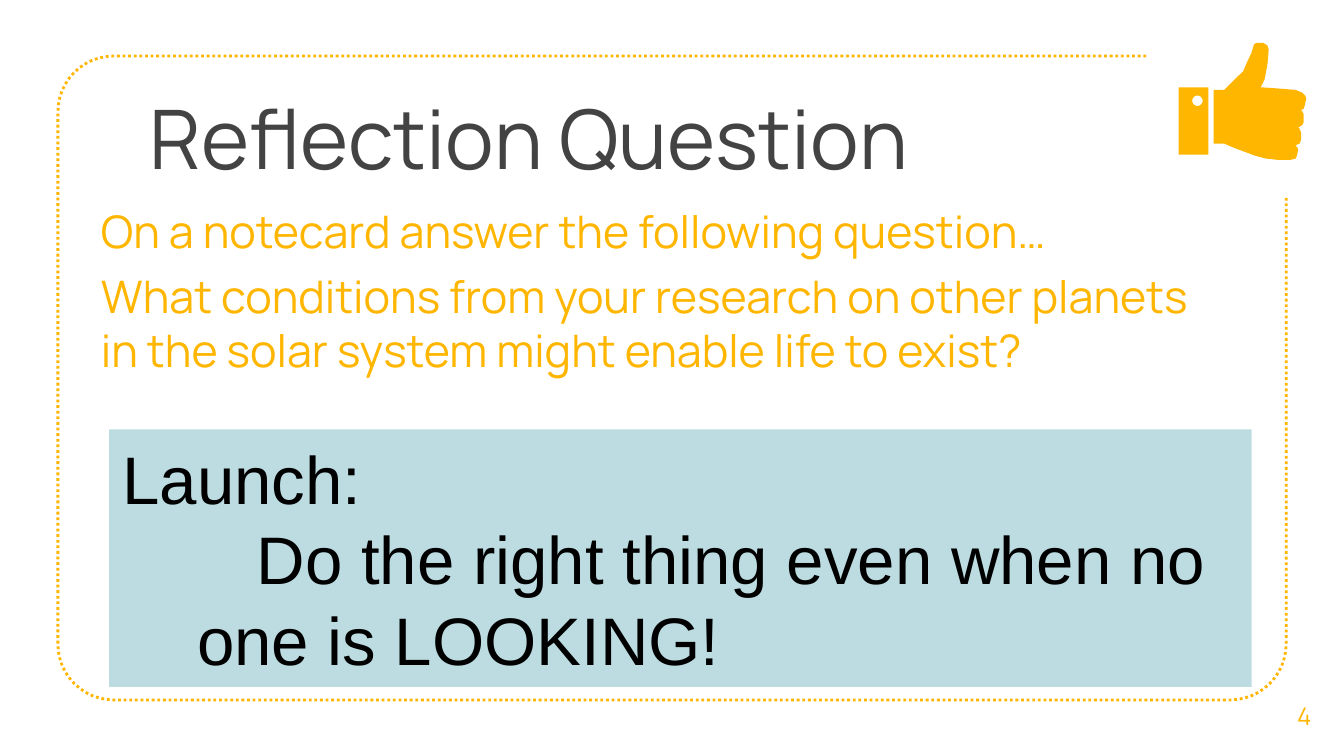
import math
from dataclasses import dataclass

from pptx import Presentation
from pptx.dml.color import RGBColor
from pptx.enum.dml import MSO_LINE
from pptx.enum.shapes import MSO_SHAPE
from pptx.enum.text import MSO_ANCHOR, PP_ALIGN
from pptx.util import Pt

RECTANGLE = MSO_SHAPE.RECTANGLE
DOTTED = MSO_LINE.ROUND_DOT
TOP, MIDDLE = MSO_ANCHOR.TOP, MSO_ANCHOR.MIDDLE
LEFT, CENTER = PP_ALIGN.LEFT, PP_ALIGN.CENTER


@dataclass(frozen=True)
class Theme:
    accent: RGBColor = RGBColor(0xFF, 0xB6, 0x00)
    heading: RGBColor = RGBColor(0x43, 0x43, 0x43)
    banner: RGBColor = RGBColor(0xBC, 0xDC, 0xE1)
    ink: RGBColor = RGBColor(0, 0, 0)
    main_font: str = "Manrope"
    banner_font: str = "Arial"
    title_size: float = 44
    body_size: float = 24
    banner_size: float = 36
    number_size: float = 13


THEME = Theme()

THUMB = [
    (675.4, 23), (673, 23), (671.8, 23.8), (670.3, 28.8), (668.2, 33.1),
    (666, 38.2), (663.1, 41), (655.9, 48.2), (650.2, 48.2), (650.2, 77),
    (655.9, 77), (661, 79.2), (672.5, 83.5), (678.2, 85), (684.7, 85.7),
    (691.2, 85.7), (694.1, 85), (694.8, 83.5), (695.5, 80), (694.1, 77.8),
    (696.2, 77), (697, 75), (697, 71), (696.2, 69), (695.5, 68.4),
    (697.7, 67), (698.4, 65.5), (698.4, 61.2), (697.7, 59.8), (697, 59),
    (698.4, 58.3), (699.1, 56.2), (699.8, 52.6), (699.1, 51.1),
    (697.7, 49.7), (694.1, 48.2), (685.4, 47.5), (675.4, 46.8),
    (677.5, 42.5), (679, 34.6), (679.7, 26.6), (679, 24.5), (676.8, 23),
]


def arc(center_x, center_y, radius, start, sweep, steps):
    angles = [math.radians(start + sweep * step / steps) for step in range(steps + 1)]
    return [(center_x + radius * math.cos(angle), center_y + radius * math.sin(angle))
            for angle in angles]


def add_outline(page, contours, closed=True):
    contours = [[(Pt(x), Pt(y)) for x, y in contour] for contour in contours]
    builder = page.shapes.build_freeform(*contours[0][0], scale=1.0)
    for index, contour in enumerate(contours):
        if index:
            builder.move_to(*contour[0])
        builder.add_line_segments(contour[1:], close=closed)
    shape = builder.convert_to_shape()
    shape.shadow.inherit = False
    return shape


def add_frame(page):
    left, top, right, bottom, radius = 31, 30, 689, 375, 30
    points = [(614, top)]
    points += arc(left + radius, top + radius, radius, 270, -90, 12)
    points += arc(left + radius, bottom - radius, radius, 180, -90, 12)
    points += arc(right - radius, bottom - radius, radius, 90, -90, 12)
    points.append((right, 105))
    frame = add_outline(page, [points], closed=False)
    frame.fill.background()
    frame.line.color.rgb = THEME.accent
    frame.line.width = Pt(1.5)
    frame.line.dash_style = DOTTED


def add_thumbs_up(page):
    cuff = [(631.4, 46.8), (631.4, 82.8), (647.3, 82.8), (647.3, 46.8)]
    button = arc(641.5, 54, 2.8, 0, 360, 24)
    for contours in ([cuff, button], [THUMB]):
        part = add_outline(page, contours)
        part.fill.solid()
        part.fill.fore_color.rgb = THEME.accent
        part.line.fill.background()


def write(box, texts, size, color, font=THEME.main_font, align=LEFT, anchor=TOP,
          inset=7.2, space_before=0, line_spacing=None):
    frame = box.text_frame
    frame.word_wrap = True
    frame.vertical_anchor = anchor
    frame.margin_left = frame.margin_right = Pt(7.2)
    frame.margin_top = frame.margin_bottom = Pt(inset)
    for index, text in enumerate(texts):
        para = frame.add_paragraph() if index else frame.paragraphs[0]
        para.alignment = align
        para.space_before = Pt(space_before)
        if line_spacing:
            para.line_spacing = Pt(line_spacing)
        span = para.add_run()
        span.text = text
        span.font.name = font
        span.font.size = Pt(size)
        span.font.color.rgb = color
    return frame


def add_text(page, left, top, width, height, texts, size, color, **layout):
    box = page.shapes.add_textbox(Pt(left), Pt(top), Pt(width), Pt(height))
    write(box, texts, size, color, **layout)


def add_banner(page):
    box = page.shapes.add_shape(RECTANGLE, Pt(58.5), Pt(230), Pt(612), Pt(138))
    box.shadow.inherit = False
    box.fill.solid()
    box.fill.fore_color.rgb = THEME.banner
    box.line.fill.background()
    frame = write(box, ["Launch:", "Do the right thing even when no one is LOOKING!"],
                  THEME.banner_size, THEME.ink, font=THEME.banner_font,
                  anchor=MIDDLE, inset=3.6, line_spacing=43.2)
    properties = frame.paragraphs[1]._p.get_or_add_pPr()
    properties.set("marL", str(Pt(40)))
    properties.set("indent", str(Pt(32)))


def main():
    deck = Presentation()
    deck.slide_width, deck.slide_height = Pt(720), Pt(405)
    page = deck.slides.add_slide(deck.slide_layouts[6])
    add_frame(page)
    add_text(page, 73, 39.5, 438, 68, ["Reflection Question"],
             THEME.title_size, THEME.heading)
    add_text(page, 47, 102, 603, 115,
             ["On a notecard answer the following question…",
              "What conditions from your research on other planets "
              "in the solar system might enable life to exist?"],
             THEME.body_size, THEME.accent, space_before=6)
    add_text(page, 677.5, 361.5, 42.5, 43.5, ["4"], THEME.number_size, THEME.accent,
             align=CENTER, anchor=MIDDLE)
    add_thumbs_up(page)
    add_banner(page)
    deck.save("out.pptx")


if __name__ == "__main__":
    main()
